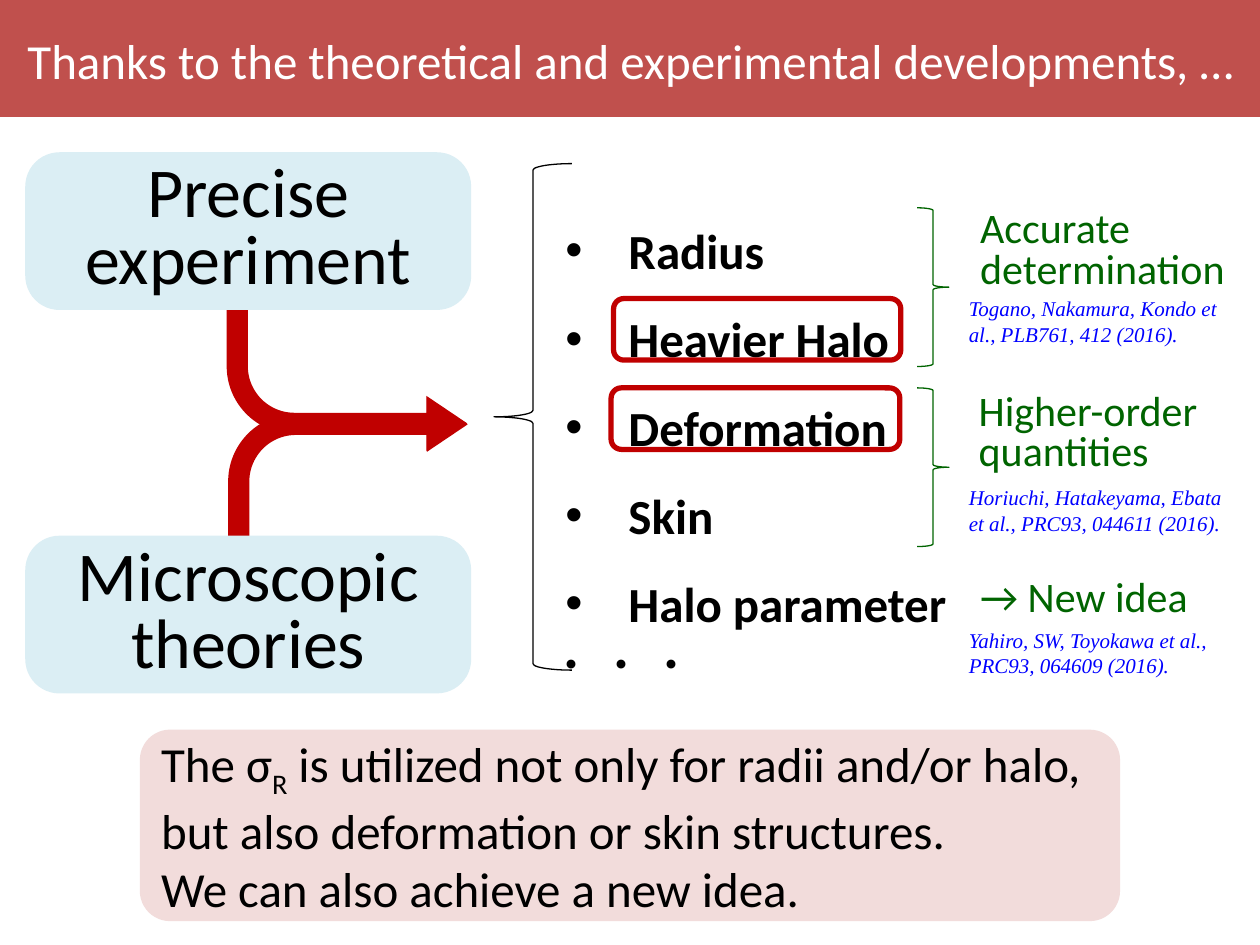
from typing import NamedTuple, Optional

from lxml import etree
from pptx import Presentation
from pptx.dml.color import RGBColor
from pptx.enum.shapes import MSO_SHAPE
from pptx.enum.text import MSO_ANCHOR, MSO_AUTO_SIZE, PP_ALIGN
from pptx.oxml.ns import qn
from pptx.util import Cm, Pt

RECT = MSO_SHAPE.RECTANGLE
ROUND = MSO_SHAPE.ROUNDED_RECTANGLE
ARROW = MSO_SHAPE.BENT_ARROW
LEFT_BRACE = MSO_SHAPE.LEFT_BRACE
RIGHT_BRACE = MSO_SHAPE.RIGHT_BRACE
TOP, MIDDLE = MSO_ANCHOR.TOP, MSO_ANCHOR.MIDDLE
LEFT, CENTER = PP_ALIGN.LEFT, PP_ALIGN.CENTER
NO_AUTOFIT = MSO_AUTO_SIZE.NONE

BRICK = RGBColor(0xC0, 0x50, 0x4D)
ROSE = RGBColor(0xF2, 0xDC, 0xDB)
ICE = RGBColor(0xDB, 0xEE, 0xF4)
RED = RGBColor(0xC0, 0x00, 0x00)
GREEN = RGBColor(0x00, 0x64, 0x00)
BLUE = RGBColor(0x00, 0x00, 0xFF)
BLACK = RGBColor(0x00, 0x00, 0x00)
WHITE = RGBColor(0xFF, 0xFF, 0xFF)


class Box(NamedTuple):
    x: float
    y: float
    w: float
    h: float


class Style(NamedTuple):
    size: float
    color: RGBColor = BLACK
    font: str = "Calibri"
    bold: bool = False
    italic: bool = False
    spacing: float = 1.0
    align: PP_ALIGN = LEFT


class Shape(NamedTuple):
    kind: MSO_SHAPE
    box: Box
    fill: Optional[RGBColor] = None
    line: Optional[RGBColor] = None
    width: float = 0.75
    adj: tuple = ()


class Label(NamedTuple):
    text: str
    box: Box
    style: Style
    wrap: bool = False


TITLE = Style(28, WHITE)
SUMMARY = Style(28)
CARD = Style(40, spacing=0.8, align=CENTER)
ITEM = Style(28, bold=True, spacing=1.5)
NOTE = Style(24, GREEN, spacing=0.8)
IDEA = Style(24, GREEN)
DOTS = Style(24)
CITE = Style(12, BLUE, "Times New Roman", italic=True)

CARDS = [("Precise experiment", 3.07), ("Microscopic theories", 10.8)]
BEND = (0.137, 0.178, 0.264, 0.438)
LINES = [
    Shape(ROUND, Box(12.37, 6.02, 5.79, 1.24), line=RED, width=3),
    Shape(ROUND, Box(12.32, 7.82, 5.82, 1.24), line=RED, width=3),
    Shape(LEFT_BRACE, Box(9.96, 3.3, 1.57, 10.21), line=BLACK),
    Shape(RIGHT_BRACE, Box(18.49, 4.19, 0.64, 3.2), line=GREEN),
    Shape(RIGHT_BRACE, Box(18.49, 7.82, 0.64, 3.2), line=GREEN),
]
LABELS = [
    Label("Accurate\ndetermination", Box(19.51, 4.14, 5.49, 1.9), NOTE),
    Label("Higher-order\nquantities", Box(19.48, 7.82, 5.08, 1.9), NOTE, True),
    Label("→ New idea", Box(19.51, 11.38, 4.75, 1.27), IDEA),
    Label("Togano, Nakamura, Kondo et al., PLB761, 412 (2016).",
          Box(19.28, 5.84, 6.12, 1.27), CITE, True),
    Label("Horiuchi, Hatakeyama, Ebata et al., PRC93, 044611 (2016).",
          Box(19.28, 9.65, 5.74, 1.27), CITE, True),
    Label("Yahiro, SW, Toyokawa et al., PRC93, 064609 (2016).",
          Box(19.28, 12.52, 5.36, 1.27), CITE, True),
]


def place(sp, box: Box) -> None:
    sp.left, sp.top, sp.width, sp.height = map(Cm, box)


def format_text(tf, style: Style) -> None:
    for p in tf.paragraphs:
        p.alignment = style.align
        p.line_spacing = style.spacing
        for r in p.runs:
            font = r.font
            font.size, font.name = Pt(style.size), style.font
            font.bold, font.italic = style.bold, style.italic
            font.color.rgb = style.color


def add_shape(slide, item: Shape):
    sp = slide.shapes.add_shape(item.kind, *map(Cm, item.box))
    sp.shadow.inherit = False
    for i, value in enumerate(item.adj):
        sp.adjustments[i] = value
    if item.fill is None:
        sp.fill.background()
    else:
        sp.fill.solid()
        sp.fill.fore_color.rgb = item.fill
    if item.line is None:
        sp.line.fill.background()
    else:
        sp.line.color.rgb = item.line
        sp.line.width = Pt(item.width)
    return sp


def add_label(slide, label: Label):
    sp = slide.shapes.add_textbox(*map(Cm, label.box))
    tf = sp.text_frame
    tf.word_wrap = label.wrap
    tf.text = label.text
    format_text(tf, label.style)
    return sp


def add_bullets(tf) -> None:
    for p in tf.paragraphs:
        pPr = p._p.get_or_add_pPr()
        pPr.set("marL", str(Cm(1.27)))
        pPr.set("indent", str(-Cm(1.27)))
        etree.SubElement(pPr, qn("a:buFont")).set("typeface", "Arial")
        etree.SubElement(pPr, qn("a:buChar")).set("char", "•")


def add_title(slide) -> None:
    banner = add_shape(slide, Shape(RECT, Box(0, 0, 25.4, 2.36), BRICK))
    slide.shapes._spTree.insert(2, banner._element)
    title = slide.shapes.title
    place(title, Box(0.3, 0.48, 25.1, 1.45))
    tf = title.text_frame
    tf.text = "Thanks to the theoretical and experimental developments, …"
    tf.auto_size = NO_AUTOFIT
    tf.word_wrap = False
    tf.vertical_anchor = TOP
    format_text(tf, TITLE)


def add_summary(slide) -> None:
    box = Box(2.82, 14.71, 19.76, 3.86)
    tf = add_shape(slide, Shape(ROUND, box, ROSE, adj=(0.158,))).text_frame
    tf.word_wrap = True
    tf.vertical_anchor = MIDDLE
    p = tf.paragraphs[0]
    for text in ("The σ", "R", " is utilized not only for radii and/or halo, "
                 "but also deformation or skin structures."):
        p.add_run().text = text
    tf.add_paragraph().text = "We can also achieve a new idea."
    format_text(tf, SUMMARY)
    p.runs[1].font._element.set("baseline", "-25000")


def add_sources(slide) -> None:
    add_shape(slide, Shape(ARROW, Box(4.6, 8, 4.83, 3.12), RED, adj=BEND))
    down = add_shape(slide, Shape(ARROW, Box(4.57, 5.97, 4.85, 3.12), RED, adj=BEND))
    down.rotation = 180
    down._element.spPr.find(qn("a:xfrm")).set("flipH", "1")
    for text, y in CARDS:
        card = Shape(ROUND, Box(0.51, y, 8.99, 3.18), ICE, adj=(0.217,))
        tf = add_shape(slide, card).text_frame
        tf.word_wrap = True
        tf.vertical_anchor = MIDDLE
        tf.text = text
        format_text(tf, CARD)


def add_quantities(slide) -> None:
    text = "Radius\nHeavier Halo\nDeformation\nSkin\nHalo parameter"
    items = add_label(slide, Label(text, Box(11.15, 3.73, 8.28, 9.25), ITEM))
    add_bullets(items.text_frame)
    dots = add_label(slide, Label("・・・", Box(10.85, 12.75, 3.5, 1.27), DOTS))
    dots.text_frame.paragraphs[0].runs[0].font._element.set("spc", "450")


def main() -> None:
    prs = Presentation()
    prs.slide_width, prs.slide_height = Cm(25.4), Cm(19.05)
    slide = prs.slides.add_slide(prs.slide_layouts[5])
    add_title(slide)
    add_summary(slide)
    add_sources(slide)
    add_quantities(slide)
    for item in LINES:
        add_shape(slide, item)
    for label in LABELS:
        add_label(slide, label)
    prs.save("out.pptx")


if __name__ == "__main__":
    main()
